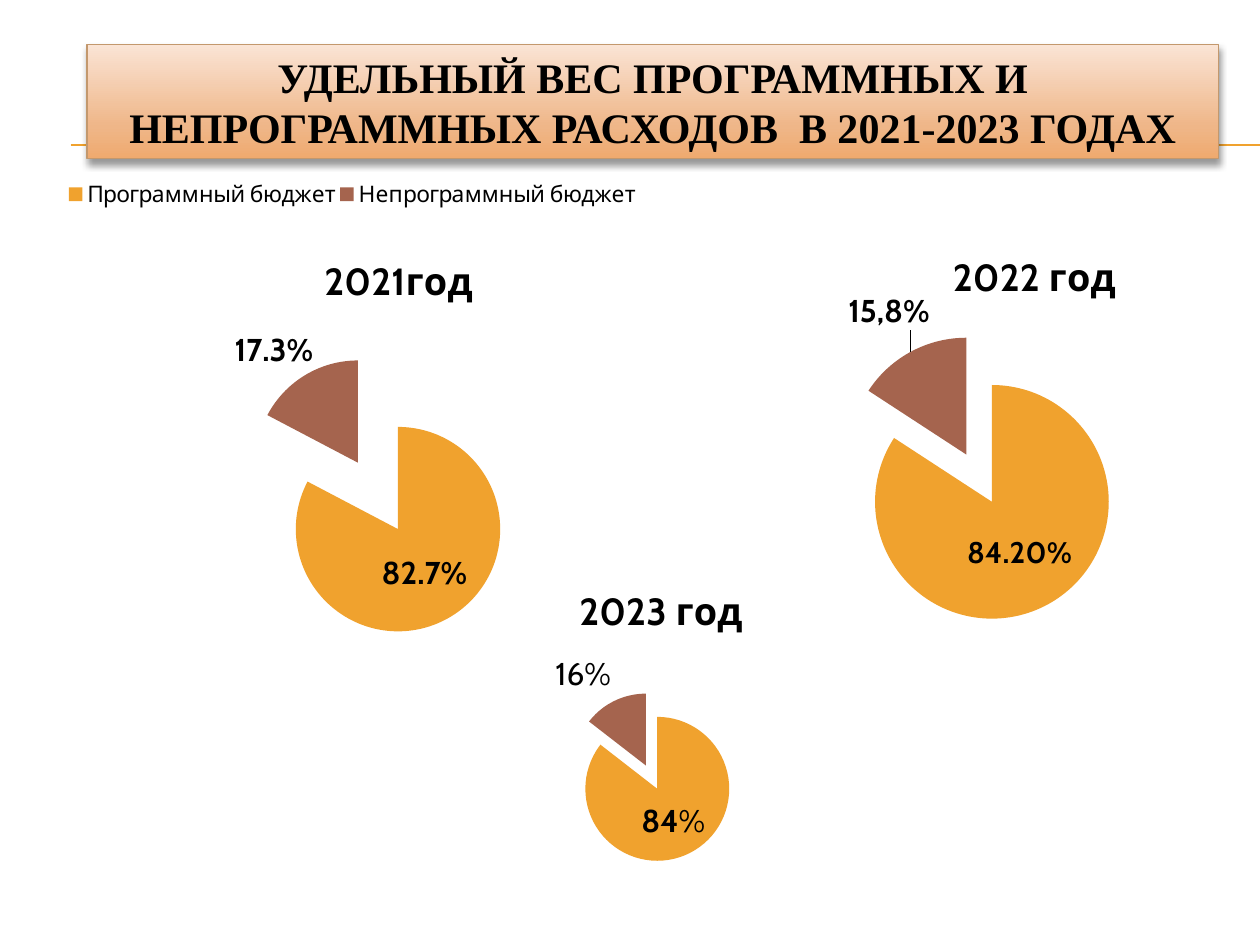
from dataclasses import dataclass

from lxml.etree import SubElement
from pptx import Presentation
from pptx.chart.data import CategoryChartData
from pptx.dml.color import RGBColor
from pptx.enum.chart import XL_CHART_TYPE as ChartType
from pptx.enum.chart import XL_LABEL_POSITION as LabelPosition
from pptx.enum.chart import XL_LEGEND_POSITION as LegendPosition
from pptx.enum.shapes import MSO_CONNECTOR as Connector
from pptx.enum.shapes import MSO_SHAPE as Shape
from pptx.enum.text import MSO_ANCHOR as Anchor
from pptx.enum.text import PP_ALIGN as Align
from pptx.oxml import parse_xml
from pptx.oxml.ns import nsdecls, qn
from pptx.util import Inches, Pt

WIDTH, HEIGHT = Inches(10), Inches(7.5)


@dataclass(frozen=True)
class Theme:
    """Colours, fonts and type sizes of the slide."""
    program: str = "F0A22E"
    other: str = "A5644E"
    ink: str = "000000"
    banner_line: str = "C3986D"
    banner_stops: tuple = ((0, "FAE4D5"), (72, "EFB688"), (100, "EFAA6F"))
    heading_font: str = "Times New Roman"
    chart_font: str = "Cabin"
    heading: float = 24
    chart_title: float = 21.6
    label: float = 18
    legend: float = 13


@dataclass(frozen=True)
class Pie:
    """Content of one pie chart; layouts are shares of the chart's box."""
    title: str
    values: tuple
    explosion: int
    title_at: tuple
    plot: tuple
    label_shift: tuple
    number_format: str = "0.0%"
    label_size: float = 18
    categories: tuple = ("1", "2")
    texts: tuple = ()
    legend: bool = False
    leaders: bool = True


THEME = Theme()


def colour(value):
    """Turn a hex string into a colour."""
    return RGBColor.from_string(value)


def box(left, top, width, height):
    """Turn shares of the slide's size into lengths."""
    return (int(WIDTH * left), int(HEIGHT * top), int(WIDTH * width), int(HEIGHT * height))


def style(font, size, bold, name=THEME.chart_font):
    """Set size, weight, face and ink of a font."""
    font.size, font.bold, font.name = Pt(size), bold, name
    font.color.rgb = colour(THEME.ink)


def place(parent, index, values, edge=True):
    """Give a chart part a manual layout as its child at the index."""
    for old in parent.findall(qn("c:layout")):
        parent.remove(old)
    layout = parse_xml(f"<c:layout {nsdecls('c')}><c:manualLayout/></c:layout>")
    modes = [("xMode", "edge"), ("yMode", "edge")] if edge else []
    for tag, value in modes + list(zip("xywh", values)):
        SubElement(layout[0], qn(f"c:{tag}")).set("val", str(value))
    if parent.tag == qn("c:plotArea"):
        layout[0].insert(0, parse_xml(f'<c:layoutTarget {nsdecls("c")} val="inner"/>'))
    parent.insert(index, layout)


def add_rule(slide, bounds):
    """Draw the double rule along the top and bottom of the bounds."""
    left, top, width, height = bounds
    for y in (top, top + height):
        line = slide.shapes.add_connector(Connector.STRAIGHT, left, y, left + width, y)
        line.line.color.rgb, line.line.width = colour(THEME.program), Pt(0.75)
        SubElement(line._element.spPr, qn("a:effectLst"))


def add_banner(slide, bounds, text):
    """Draw the shaded heading banner."""
    shape = slide.shapes.add_shape(Shape.RECTANGLE, *bounds)
    shape.fill.gradient()
    shape.fill.gradient_angle = 270
    stops = shape._element.spPr.find(f".//{qn('a:gsLst')}")
    stops[:] = [
        parse_xml(f'<a:gs {nsdecls("a")} pos="{share * 1000}"><a:srgbClr val="{value}"/></a:gs>')
        for share, value in THEME.banner_stops
    ]
    shape.line.color.rgb, shape.line.width = colour(THEME.banner_line), Pt(0.79)
    shape.shadow.inherit = False
    shape._element.spPr.find(qn("a:effectLst")).append(parse_xml(
        f'<a:outerShdw {nsdecls("a")} blurRad="{Pt(4)}" dist="{Pt(3)}" dir="5400000" '
        f'rotWithShape="0"><a:srgbClr val="{THEME.ink}"><a:alpha val="40000"/>'
        '</a:srgbClr></a:outerShdw>'))
    frame = shape.text_frame
    frame.word_wrap, frame.vertical_anchor = True, Anchor.MIDDLE
    paragraph = frame.paragraphs[0]
    paragraph.text, paragraph.alignment = text, Align.CENTER
    style(paragraph.font, THEME.heading, True, THEME.heading_font)


def add_labels(plot, pie):
    """Label the slices and move the small slice's label outside."""
    plot.has_data_labels = True
    series = plot.series[0]
    labels = series.data_labels
    labels.show_value, labels.position = True, LabelPosition.CENTER
    labels.number_format, labels.number_format_is_linked = pie.number_format, False
    style(labels.font, pie.label_size, True)
    leaders = labels._element.find(qn("c:showLeaderLines"))
    if leaders is None:
        leaders = SubElement(labels._element, qn("c:showLeaderLines"))
    leaders.set("val", str(int(pie.leaders)))
    for index, runs in enumerate(pie.texts):
        if runs:
            paragraph = series.points[index].data_label.text_frame.paragraphs[0]
            for text, bold in runs:
                run = paragraph.add_run()
                run.text = text
                style(run.font, THEME.label, bold)
    small = series.points[1].data_label
    if not small.has_text_frame:
        style(small.font, pie.label_size, True)
    small.position = LabelPosition.CENTER
    place(small._get_or_add_dLbl(), 1, pie.label_shift, edge=False)


def add_pie(slide, bounds, pie):
    """Draw one exploded pie with its title, labels and legend."""
    data = CategoryChartData(number_format=pie.number_format)
    data.categories = pie.categories
    data.add_series(pie.title, pie.values)
    chart = slide.shapes.add_chart(ChartType.PIE, *bounds, data).chart
    style(chart.font, THEME.label, False)
    chart.has_title = True
    paragraph = chart.chart_title.text_frame.paragraphs[0]
    run = paragraph.add_run()
    run.text = pie.title
    style(run.font, THEME.chart_title, True)
    place(chart.chart_title._element, 1, pie.title_at)
    chart.has_legend = pie.legend
    if pie.legend:
        chart.legend.position, chart.legend.include_in_layout = LegendPosition.TOP, False
        style(chart.legend.font, THEME.legend, False)
        place(chart.legend._element, 1, (0, 0.01, 1, 0.06))
    plot = chart.plots[0]
    plot.vary_by_categories = True
    place(plot._element.getparent(), 0, pie.plot)
    series = plot.series[0]
    for index, value in enumerate((THEME.program, THEME.other)):
        fill = series.points[index].format.fill
        fill.solid()
        fill.fore_color.rgb = colour(value)
    series._element.find(qn("c:dPt")).addprevious(
        parse_xml(f'<c:explosion {nsdecls("c")} val="{pie.explosion}"/>'))
    add_labels(plot, pie)


def main():
    """Build and save the slide."""
    presentation = Presentation()
    presentation.slide_width, presentation.slide_height = WIDTH, HEIGHT
    slide = presentation.slides.add_slide(presentation.slide_layouts[6])
    add_rule(slide, box(0.056, 0.153, 0.944, 0.001))
    add_banner(slide, box(0.069, 0.047, 0.898, 0.121),
               "УДЕЛЬНЫЙ ВЕС ПРОГРАММНЫХ И НЕПРОГРАММНЫХ РАСХОДОВ  В 2021-2023 ГОДАХ")
    add_pie(slide, box(0.051, 0.185, 0.457, 0.515), Pie(
        "2021год", (0.827, 0.173), 38, (0.44, 0.15), (0.3, 0.37, 0.49, 0.58), (-0.1, -0.14),
        categories=("Программный бюджет", "Непрограммный бюджет"), legend=True))
    add_pie(slide, box(0.563, 0.248, 0.437, 0.461), Pie(
        "2022 год", (0.842, 0.158), 23, (0.43, 0.02), (0.1, 0.23, 0.78, 0.66), (-0.09, -0.21),
        number_format="0.00%", label_size=17, texts=((), (("15,8%", True),))))
    add_pie(slide, box(0.287, 0.584, 0.465, 0.388), Pie(
        "2023 год", (0.855, 0.145), 18, (0.36, 0.07), (0.35, 0.38, 0.29, 0.47), (-0.08, -0.16),
        texts=((("84", True), ("%", False)), (("16%", False),)), leaders=False))
    presentation.save("out.pptx")


if __name__ == "__main__":
    main()
